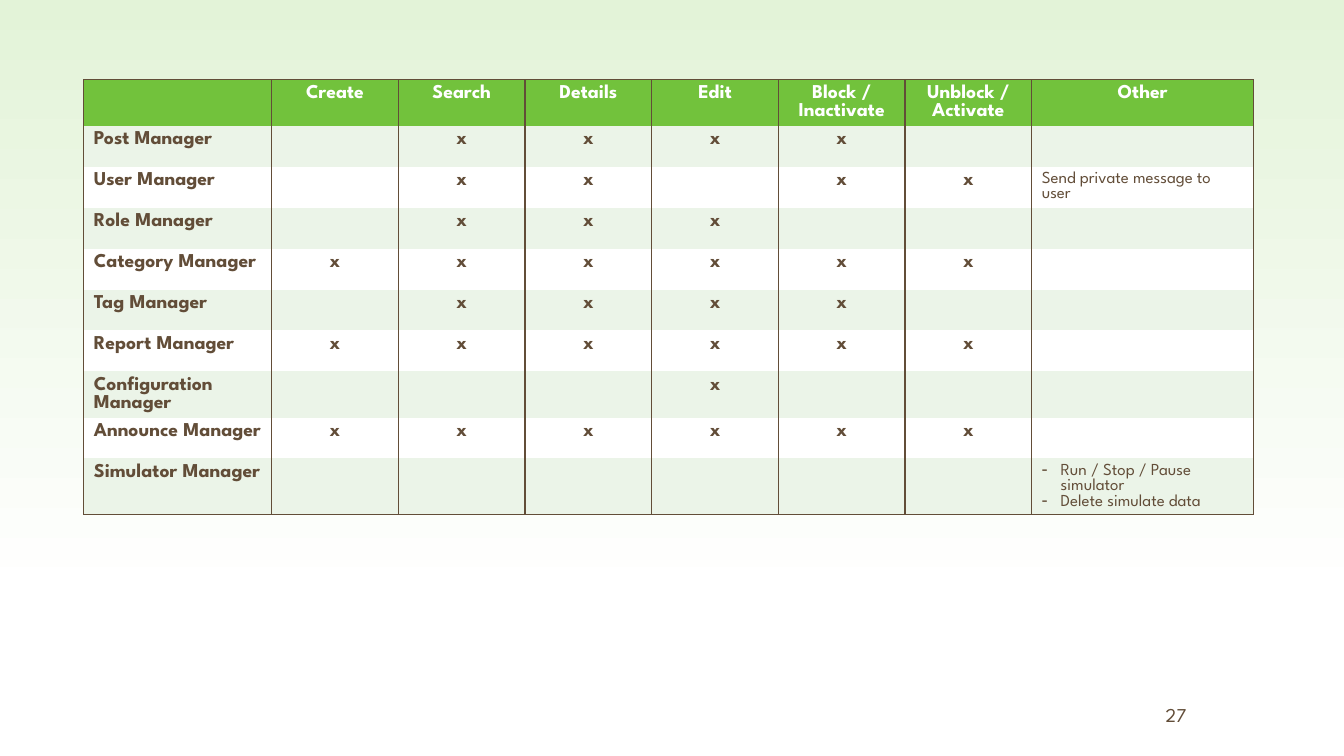
from lxml import etree
from pptx import Presentation
from pptx import util as u
from pptx.dml.color import RGBColor
from pptx.enum import text
from pptx.oxml.ns import qn

COLORS = {
    "brown": "624D38",
    "green": "72C23C",
    "band": "EBF4E8",
    "white": "FFFFFF",
    "sky": "E3F3D8",
}
FONT = "League Spartan"
LINE_PITCH = 0.92  # line height as a share of the font size
LEFT, CENTER, RIGHT = text.PP_ALIGN.LEFT, text.PP_ALIGN.CENTER, text.PP_ALIGN.RIGHT

HEADINGS = ["", "Create", "Search", "Details", "Edit",
            "Block / Inactivate", "Unblock / Activate", "Other"]
# Manager, one mark per action column, other actions
MANAGERS = [
    ("Post Manager", "-xxxx-", []),
    ("User Manager", "-xx-xx", ["Send private message to user"]),
    ("Role Manager", "-xxx--", []),
    ("Category Manager", "xxxxxx", []),
    ("Tag Manager", "-xxxx-", []),
    ("Report Manager", "xxxxxx", []),
    ("Configuration Manager", "---x--", []),
    ("Announce Manager", "xxxxxx", []),
    ("Simulator Manager", "------",
     ["Run / Stop / Pause simulator", "Delete simulate data"]),
]
COLUMN_WIDTHS = [134.3] + [90.5] * 6 + [158.5]
ROW_HEIGHT = 29.25


def rgb(name):
    return RGBColor.from_string(COLORS[name])


def write(paragraph, content, size=14, color="brown", bold=False, align=LEFT, bullet=None):
    paragraph.alignment = align
    paragraph.line_spacing = u.Pt(size * LINE_PITCH)
    if bullet:
        props = paragraph._p.get_or_add_pPr()
        props.set("marL", str(u.Pt(13.5)))
        props.set("indent", str(-u.Pt(13.5)))
        etree.SubElement(props, qn("a:buChar"), char=bullet)
    if not content:
        etree.SubElement(paragraph._p, qn("a:endParaRPr"), sz=str(size * 100))
        return
    run = paragraph.add_run()
    run.text = content
    run.font.name, run.font.size, run.font.bold = FONT, u.Pt(size), bold
    run.font.color.rgb = rgb(color)


class SlideBuilder:
    def __init__(self, slide):
        self.slide = slide

    def background(self, top, bottom, end):
        fill = self.slide.background.fill
        fill.gradient()
        fill.gradient_angle = 270
        for stop, color, position in zip(fill.gradient_stops, (top, bottom), (0, end)):
            stop.color.rgb = rgb(color)
            stop.position = position

    def label(self, content, left, top, width, height, **style):
        frame = self.slide.shapes.add_textbox(
            u.Pt(left), u.Pt(top), u.Pt(width), u.Pt(height)).text_frame
        frame.word_wrap = True
        frame.vertical_anchor = text.MSO_ANCHOR.MIDDLE
        write(frame.paragraphs[0], content, **style)

    def table(self, left, top, widths, row_height, row_count):
        grid = self.slide.shapes.add_table(
            row_count, len(widths), u.Pt(left), u.Pt(top),
            u.Pt(sum(widths)), u.Pt(row_height * row_count)).table
        grid.first_row = grid.horz_banding = False
        for column, width in zip(grid.columns, widths):
            column.width = u.Pt(width)
        return grid

    def cell(self, cell, lines, fill, edges, **style):
        props = cell._tc.get_or_add_tcPr()
        for edge in "LRTB":
            line = etree.SubElement(props, qn(f"a:ln{edge}"), w=str(u.Pt(1)))
            if edge in edges:
                solid = etree.SubElement(line, qn("a:solidFill"))
                etree.SubElement(solid, qn("a:srgbClr"), val=COLORS["brown"])
            else:
                etree.SubElement(line, qn("a:noFill"))
        cell.fill.solid()
        cell.fill.fore_color.rgb = rgb(fill)
        frame = cell.text_frame
        for index, line in enumerate(lines or [""]):
            paragraph = frame.add_paragraph() if index else frame.paragraphs[0]
            write(paragraph, line, **style)


def main():
    deck = Presentation()
    deck.slide_width, deck.slide_height = u.Pt(960), u.Pt(540)
    builder = SlideBuilder(deck.slides.add_slide(deck.slide_layouts[6]))
    builder.background("sky", "white", 0.79)

    # Page number
    builder.label("27", 804.2, 503.3, 50.4, 18.7, align=RIGHT)

    # Permission table: header row
    matrix = builder.table(59.8, 56.9, COLUMN_WIDTHS, ROW_HEIGHT, len(MANAGERS) + 1)
    for col, heading in enumerate(HEADINGS):
        builder.cell(matrix.cell(0, col), [heading], "green", "LRT",
                     color="white", bold=True, align=CENTER)

    # Permission table: one row per manager
    for row, (manager, marks, others) in enumerate(MANAGERS, 1):
        fill = "band" if row % 2 else "white"
        edges = "LRB" if row == len(MANAGERS) else "LR"
        builder.cell(matrix.cell(row, 0), [manager], fill, edges, bold=True)
        for col, mark in enumerate(marks, 1):
            builder.cell(matrix.cell(row, col), [mark.strip("-")], fill, edges,
                         bold=True, align=CENTER)
        builder.cell(matrix.cell(row, len(marks) + 1), others, fill, edges,
                     size=12, bullet="-" if len(others) > 1 else None)

    deck.save("out.pptx")


if __name__ == "__main__":
    main()
